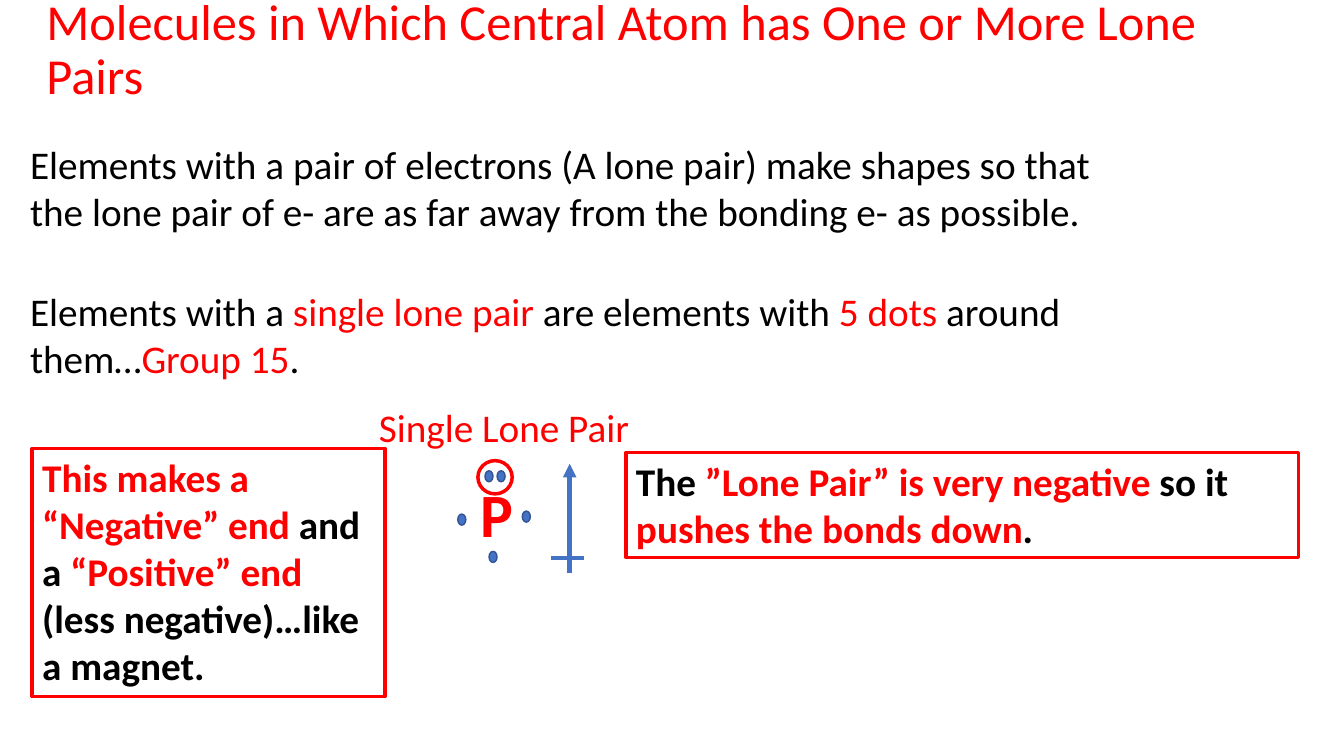
from pptx import Presentation
from pptx.dml.color import RGBColor
from pptx.enum.shapes import MSO_CONNECTOR, MSO_SHAPE
from pptx.enum.text import MSO_ANCHOR, MSO_AUTO_SIZE, PP_ALIGN
from pptx.oxml.ns import qn
from pptx.util import Pt
from lxml.etree import SubElement

PX = 9144  # EMU in one px, at 100 px to the inch
FONT = "Calibri"
RED = RGBColor(0xFF, 0x00, 0x00)
BLACK = RGBColor(0x00, 0x00, 0x00)
BLUE = RGBColor(0x44, 0x72, 0xC4)
DARK_BLUE = RGBColor(0x32, 0x54, 0x91)

TITLE = "Molecules in Which Central Atom has One or More Lone Pairs"
TITLE_BOX = (36, 10, 1263, 82)

# (left, top, width, height), runs
STATEMENTS = [
    ((20, 134, 1120, 104), [
        ("Elements with a pair of electrons (A lone pair) make shapes so that "
         "the lone pair of e- are as far away from the bonding e- as possible.", BLACK)]),
    ((20, 280, 1120, 104), [
        ("Elements with a ", BLACK), ("single lone pair", RED),
        (" are elements with ", BLACK), ("5 dots ", RED),
        ("around them…", BLACK), ("Group 15", RED), (".", BLACK)]),
    ((366, 395, 271, 57), [("Single Lone Pair", RED)]),
]
FRAMED_NOTES = [
    ((621, 449, 667, 104), [
        ("The ", BLACK), ("”Lone Pair” is very negative ", RED),
        ("so it ", BLACK), ("pushes the bonds down", RED), (".", BLACK)]),
    ((32, 445, 350, 246), [
        ("This makes a “Negative” end ", RED), ("and a ", BLACK),
        ("“Positive” end ", RED), ("(less negative)…like a magnet.", BLACK)]),
]
ATOM_BOX = (467, 467, 57, 84)
ATOM = [("P", RED)]
ELECTRON_SIZE = (8, 11)
ELECTRONS = [(493, 467), (518, 507), (485, 547), (454, 510), (481, 467)]
LONE_PAIR_RING = (474, 457, 34, 33)
DIPOLE_ARROW = (565, 568, 565, 460)
DIPOLE_CROSSBAR = (547, 554, 579, 554)


def emu(lengths):
    return [length * PX for length in lengths]


def add_runs(paragraph, runs, size, bold=False):
    for wording, color in runs:
        run = paragraph.add_run()
        run.text = wording
        run.font.name = FONT
        run.font.size = Pt(size)
        run.font.bold = bold
        run.font.color.rgb = color


def add_text(slide, box, runs, size=28, bold=False):
    text_box = slide.shapes.add_textbox(*emu(box))
    text_box.text_frame.word_wrap = True
    add_runs(text_box.text_frame.paragraphs[0], runs, size, bold)
    return text_box


def set_line(shape, color, width):
    shape.line.color.rgb = color
    shape.line.width = Pt(width)


def add_oval(slide, box, line_color, line_width, fill=None):
    oval = slide.shapes.add_shape(MSO_SHAPE.OVAL, *emu(box))
    oval.shadow.inherit = False
    if fill is None:
        oval.fill.background()
    else:
        oval.fill.solid()
        oval.fill.fore_color.rgb = fill
    set_line(oval, line_color, line_width)


def add_line(slide, ends, width):
    line = slide.shapes.add_connector(MSO_CONNECTOR.STRAIGHT, *emu(ends))
    set_line(line, BLUE, width)
    SubElement(line._element.spPr, qn("a:effectLst"))
    return line


def add_title(slide):
    title = slide.shapes.title
    title.left, title.top, title.width, title.height = emu(TITLE_BOX)
    frame = title.text_frame
    frame.word_wrap = True
    frame.auto_size = MSO_AUTO_SIZE.NONE
    frame.vertical_anchor = MSO_ANCHOR.MIDDLE
    paragraph = frame.paragraphs[0]
    paragraph.alignment = PP_ALIGN.LEFT
    paragraph.line_spacing = 0.9
    add_runs(paragraph, [(TITLE, RED)], 36)


def add_atom(slide):
    add_text(slide, ATOM_BOX, ATOM, 44, bold=True)
    for corner in ELECTRONS:
        add_oval(slide, corner + ELECTRON_SIZE, DARK_BLUE, 1, BLUE)
    add_oval(slide, LONE_PAIR_RING, RED, 2.5)


def add_dipole(slide):
    arrow = add_line(slide, DIPOLE_ARROW, 3.25)
    SubElement(arrow.line._get_or_add_ln(), qn("a:tailEnd"), type="triangle")
    add_line(slide, DIPOLE_CROSSBAR, 2.75)


def main():
    deck = Presentation()
    deck.slide_width, deck.slide_height = emu((1333, 750))
    slide = deck.slides.add_slide(deck.slide_layouts[5])
    add_title(slide)
    for box, runs in STATEMENTS:
        add_text(slide, box, runs)
    add_atom(slide)
    add_dipole(slide)
    for box, runs in FRAMED_NOTES:
        set_line(add_text(slide, box, runs, bold=True), RED, 2.5)
    deck.save("out.pptx")


if __name__ == "__main__":
    main()
